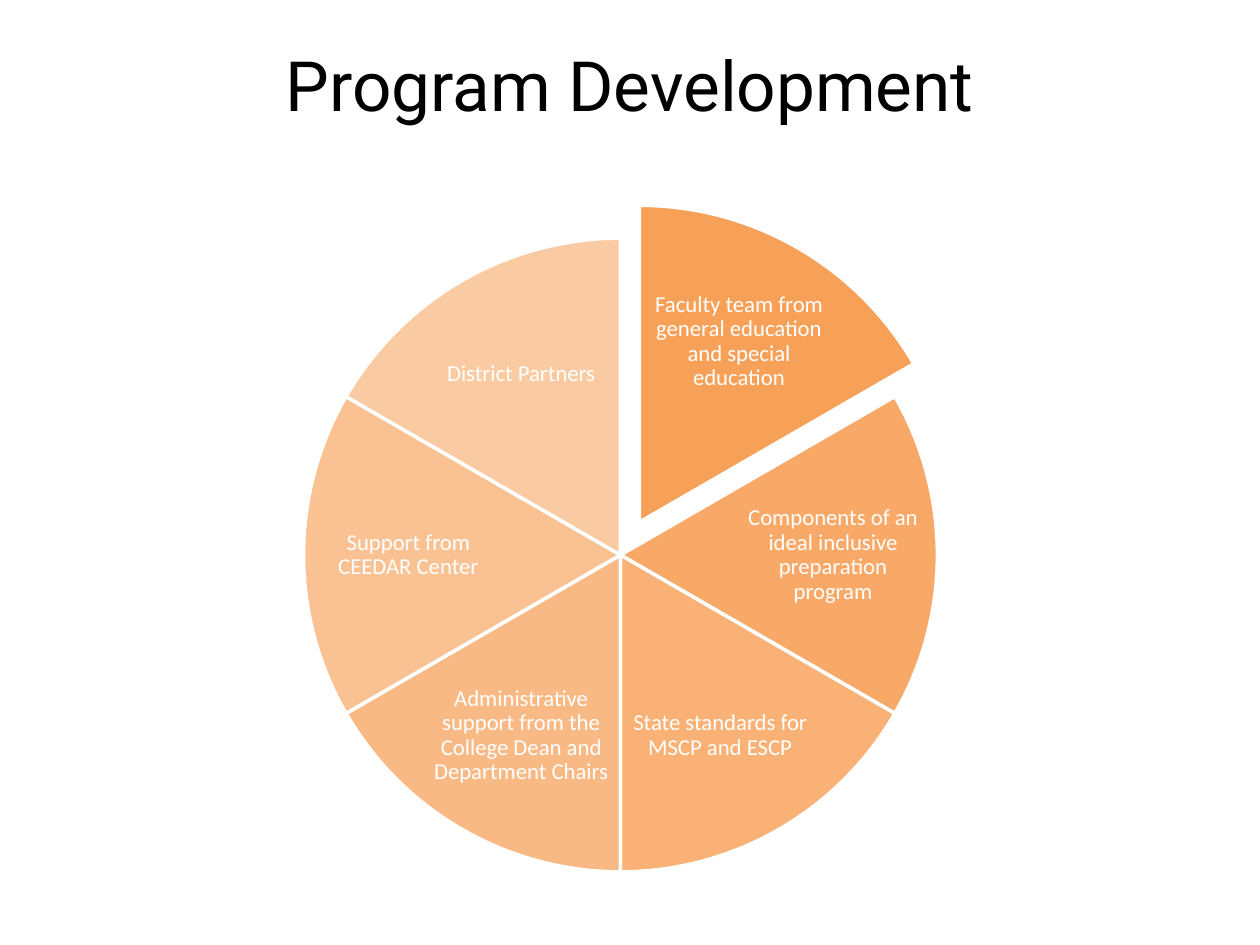
from dataclasses import dataclass

from lxml import etree
from pptx import Presentation
from pptx.dml.color import RGBColor
from pptx.enum.shapes import MSO_SHAPE
from pptx.enum.text import MSO_ANCHOR, PP_ALIGN
from pptx.oxml.ns import qn
from pptx.util import Inches, Pt

PIE = MSO_SHAPE.PIE
MIDDLE = MSO_ANCHOR.MIDDLE
CENTER = PP_ALIGN.CENTER
TITLE_ONLY = 5


@dataclass(frozen=True)
class Theme:
    orange: RGBColor = RGBColor(0xF7, 0x96, 0x46)
    white: RGBColor = RGBColor(0xFF, 0xFF, 0xFF)
    black: RGBColor = RGBColor(0, 0, 0)
    title_font: str = "Roboto"
    label_font: str = "Calibri"
    title_size: float = 39.6
    label_size: float = 13
    divider_width: float = 2
    first_opacity: int = 90
    opacity_step: int = 8


THEME = Theme()
SLIDE_W, SLIDE_H = 10, 7.5
RADIUS = 2.515
HUB = (4.925, 4.405)
PULLED_OUT_HUB = (5.075, 4.145)
START_ANGLE = 270
# Label centre from the hub, as shares of the radius, and label size in inches
DIAGONAL_X, DIAGONAL_Y, SIDE_X = 0.314, 0.57, 0.67
DIAGONAL_SIZE, SIDE_SIZE = (1.47, 1.08), (1.52, 1.02)

# Clockwise from the top: label, horizontal side, vertical side
SECTORS = [
    ("Faculty team from general education and special education", 1, -1),
    ("Components of an ideal inclusive preparation program", 1, 0),
    ("State standards for MSCP and ESCP", 1, 1),
    ("Administrative support from the College Dean and Department Chairs", -1, 1),
    ("Support from CEEDAR Center", -1, 0),
    ("District Partners", -1, -1),
]


def centred_box(center, size):
    (x, y), (width, height) = center, size
    return [Inches(v) for v in (x - width / 2, y - height / 2, width, height)]


def write_centred(frame, text, font_name, size, color):
    frame.word_wrap = True
    frame.vertical_anchor = MIDDLE
    paragraph = frame.paragraphs[0]
    paragraph.alignment = CENTER
    run = paragraph.add_run()
    run.text = text
    run.font.name = font_name
    run.font.size = Pt(size)
    run.font.color.rgb = color
    return paragraph


def set_opacity(fill_parent, percent):
    color = fill_parent.find(qn("a:solidFill")).find(qn("a:srgbClr"))
    etree.SubElement(color, qn("a:alpha")).set("val", str(percent * 1000))


def add_title(slide, text):
    title = slide.shapes.title
    title.left, title.top = Inches(0.05 * SLIDE_W), Inches(0.04 * SLIDE_H)
    title.width, title.height = Inches(0.9 * SLIDE_W), Inches(0.73)
    write_centred(title.text_frame, text, THEME.title_font,
                  THEME.title_size, THEME.black)


def add_sector(shapes, hub, start, end, opacity):
    """Draw a sector between two clockwise angles in degrees."""
    sector = shapes.add_shape(PIE, *centred_box(hub, (2 * RADIUS, 2 * RADIUS)))
    for index, angle in enumerate((start, end)):
        # Angles are stored in 1/60000 degree; adjustments count in 100000
        sector.adjustments[index] = angle % 360 * 0.6
    sector.shadow.inherit = False
    sector.fill.solid()
    sector.fill.fore_color.rgb = THEME.orange
    set_opacity(sector.element.spPr, opacity)
    sector.line.color.rgb = THEME.white
    sector.line.width = Pt(THEME.divider_width)


def add_label(shapes, hub, text, side_x, side_y):
    share_x, size = ((DIAGONAL_X, DIAGONAL_SIZE) if side_y
                     else (SIDE_X, SIDE_SIZE))
    center = (hub[0] + side_x * share_x * RADIUS,
              hub[1] + side_y * DIAGONAL_Y * RADIUS)
    frame = shapes.add_textbox(*centred_box(center, size)).text_frame
    frame.margin_left = frame.margin_right = Inches(0.02)
    frame.margin_top = frame.margin_bottom = Inches(0.02)
    paragraph = write_centred(frame, text, THEME.label_font,
                              THEME.label_size, THEME.white)
    paragraph.line_spacing = 0.9


def add_wheel(slide):
    wheel = slide.shapes.add_group_shape().shapes
    sweep = 360 / len(SECTORS)
    for index, (text, side_x, side_y) in enumerate(SECTORS):
        hub = HUB if index else PULLED_OUT_HUB
        start = START_ANGLE + index * sweep
        opacity = THEME.first_opacity - index * THEME.opacity_step
        add_sector(wheel, hub, start, start + sweep, opacity)
        add_label(wheel, hub, text, side_x, side_y)


def main():
    deck = Presentation()
    deck.slide_width, deck.slide_height = Inches(SLIDE_W), Inches(SLIDE_H)
    slide = deck.slides.add_slide(deck.slide_layouts[TITLE_ONLY])
    add_title(slide, "Program Development")
    add_wheel(slide)
    deck.save("out.pptx")


if __name__ == "__main__":
    main()
